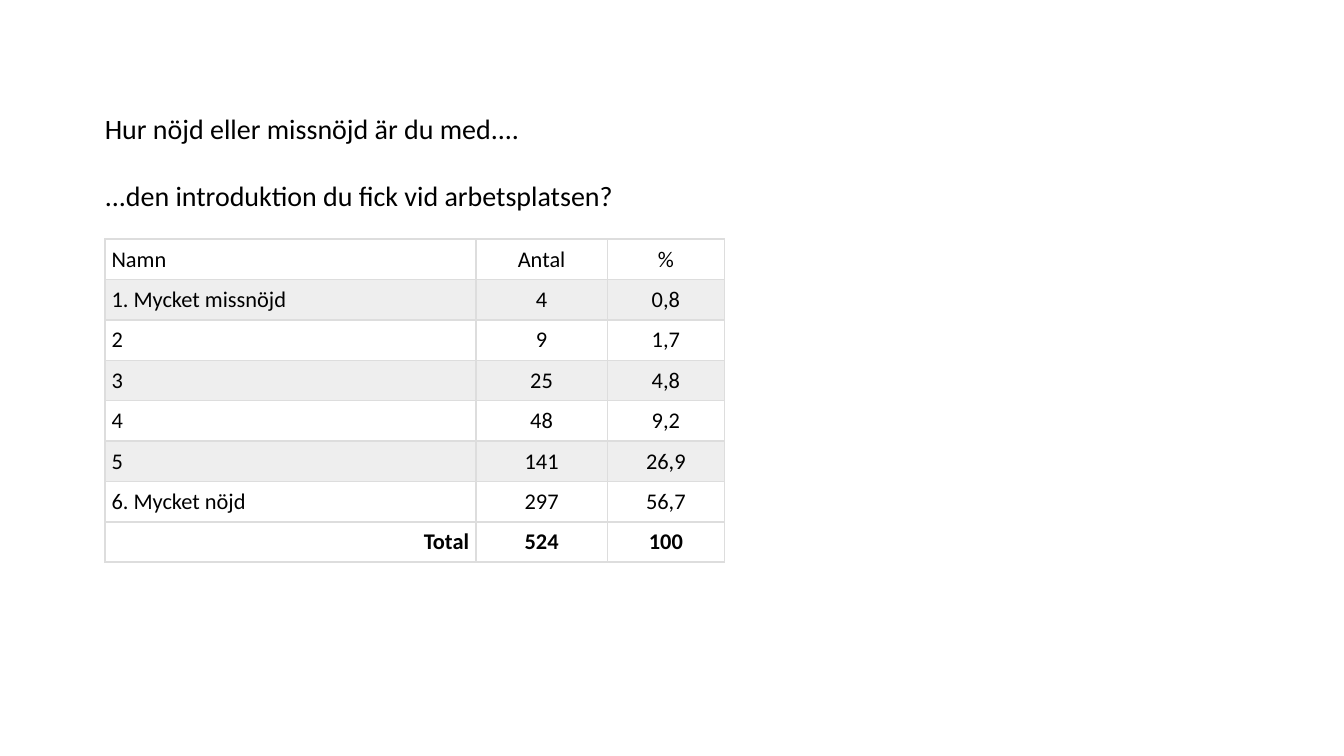
from lxml.etree import SubElement
from pptx import Presentation
from pptx.dml.color import RGBColor as Rgb
from pptx.enum.text import MSO_ANCHOR as Anchor, MSO_AUTO_SIZE as AutoSize, PP_ALIGN as Align
from pptx.oxml.ns import qn
from pptx.util import Inches, Pt

COLORS = {"text": "000000", "plain": "FFFFFF", "band": "EEEEEE", "border": "DDDDDD"}
FONT = "Calibri"

# Page grid, in inches
LEFT, TOP, STEP = 0.78, 0.78, 0.5
LINE_WIDTH, LINE_HEIGHT = 8.46, 0.35
COLUMN_WIDTHS = [2.76, 0.98, 0.87]
ROW_HEIGHT = 0.3
CELL_MARGIN = 0.05

ROWS = [
    ("Namn", "Antal", "%"),
    ("1. Mycket missnöjd", "4", "0,8"),
    ("2", "9", "1,7"),
    ("3", "25", "4,8"),
    ("4", "48", "9,2"),
    ("5", "141", "26,9"),
    ("6. Mycket nöjd", "297", "56,7"),
    ("Total", "524", "100"),
]


def write(frame, text, size, align=Align.LEFT, bold=False):
    frame.text = text
    para = frame.paragraphs[0]
    para.alignment = align
    for span in para.runs:
        span.font.name = FONT
        span.font.size = Pt(size)
        span.font.bold = bold
        span.font.color.rgb = Rgb.from_string(COLORS["text"])


def format_line(box, text, row):
    """Place a question line on the given row of the page grid."""
    box.left, box.top = Inches(LEFT), Inches(TOP + row * STEP)
    box.width, box.height = Inches(LINE_WIDTH), Inches(LINE_HEIGHT)
    frame = box.text_frame
    frame.word_wrap = True
    frame.auto_size = AutoSize.SHAPE_TO_FIT_TEXT
    frame.vertical_anchor = Anchor.MIDDLE
    frame.margin_left = frame.margin_right = 0
    frame.margin_top = frame.margin_bottom = Inches(0.05)
    write(frame, text, 15)


def add_borders(cell):
    properties = cell._tc.get_or_add_tcPr()
    for side in ("a:lnL", "a:lnR", "a:lnT", "a:lnB"):
        line = SubElement(properties, qn(side), w=str(Pt(1)))
        fill = SubElement(line, qn("a:solidFill"))
        SubElement(fill, qn("a:srgbClr"), val=COLORS["border"])


def format_cell(cell, text, align, color, bold):
    cell.margin_left = cell.margin_right = Inches(CELL_MARGIN)
    cell.margin_top = cell.margin_bottom = Inches(CELL_MARGIN)
    add_borders(cell)
    cell.fill.solid()
    cell.fill.fore_color.rgb = Rgb.from_string(color)
    write(cell.text_frame, text, 12, align, bold)


def add_answer_table(page, row):
    table = page.shapes.add_table(
        len(ROWS), len(COLUMN_WIDTHS), Inches(LEFT), Inches(TOP + row * STEP),
        Inches(sum(COLUMN_WIDTHS)), Inches(ROW_HEIGHT * len(ROWS))).table
    for column, width in zip(table.columns, COLUMN_WIDTHS):
        column.width = Inches(width)
    last = len(ROWS) - 1
    for r, values in enumerate(ROWS):
        # Every second answer is shaded; the total row is bold and plain
        color = COLORS["band" if r % 2 and r != last else "plain"]
        name_align = Align.RIGHT if r == last else Align.LEFT
        for c, text in enumerate(values):
            align = Align.CENTER if c else name_align
            format_cell(table.cell(r, c), text, align, color, r == last)


def main():
    # Widescreen page, 16:9
    deck = Presentation()
    deck.slide_width = Inches(10)
    deck.slide_height = deck.slide_width * 9 // 16
    page = deck.slides.add_slide(deck.slide_layouts[5])

    # Question
    format_line(page.shapes.title, "Hur nöjd eller missnöjd är du med....", 0)
    format_line(page.shapes.add_textbox(0, 0, 0, 0),
                "...den introduktion du fick vid arbetsplatsen?", 1)

    # Answers
    add_answer_table(page, 2)
    deck.save("out.pptx")


if __name__ == "__main__":
    main()
